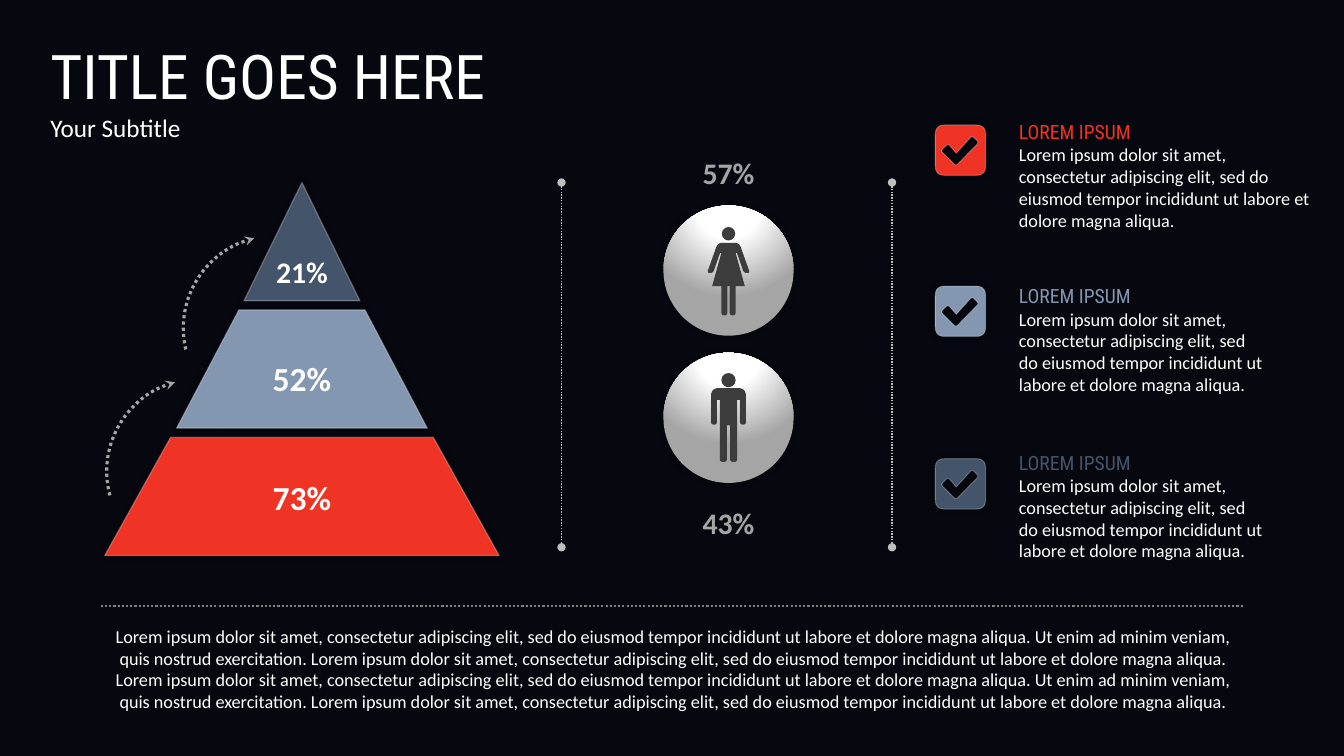
from pptx import Presentation
from pptx.dml.color import RGBColor
from pptx.enum.dml import MSO_LINE
from pptx.enum.shapes import MSO_CONNECTOR, MSO_SHAPE
from pptx.enum.text import MSO_ANCHOR, MSO_AUTO_SIZE, PP_ALIGN
from pptx.oxml import parse_xml
from pptx.oxml.ns import nsdecls, qn
from pptx.util import Cm, Pt

DOTTED = MSO_LINE.ROUND_DOT
CENTER, LEFT = PP_ALIGN.CENTER, PP_ALIGN.LEFT
TOP, BOTTOM = MSO_ANCHOR.TOP, MSO_ANCHOR.BOTTOM
GROW = MSO_AUTO_SIZE.SHAPE_TO_FIT_TEXT
OVAL, ARC, STRAIGHT = MSO_SHAPE.OVAL, MSO_SHAPE.ARC, MSO_CONNECTOR.STRAIGHT

COLORS = {
    "night": "07080F", "white": "FFFFFF", "slate": "44546B", "steel": "8397B1",
    "red": "EF3425", "silver": "A5A5A5", "arrow": "A6A6A6", "divider": "BFBFBF",
    "rule": "808080", "figure": "3C3C3C", "black": "000000",
}
HEADING_FONT, BODY_FONT = "Roboto Condensed", "Calibri"

LOREM = ("Lorem ipsum dolor sit amet, consectetur adipiscing elit, sed do eiusmod "
         "tempor incididunt ut labore et dolore magna aliqua.")
VENIAM = "Ut enim ad minim veniam, quis nostrud exercitation."
FOOTER = " ".join([LOREM, VENIAM, LOREM] * 2)
TITLE = [("TITLE GOES HERE", 44, HEADING_FONT, "white"),
         ("Your Subtitle", 18, BODY_FONT, "white")]

TIERS = [
    ("21%", 21.3, "slate", 0, 1.46, 6.4),
    ("52%", 24, "steel", 1.59, 3.16, 9.02),
    ("73%", 24, "red", 3.31, 4.97, 12.01),
]
ARROWS = [(2.69, 9.55, 254.9), (4.62, 5.94, 256.6)]
DIVIDERS = [14.15, 22.48]
FEATURES = [
    ("LOREM IPSUM", "red", 2.9, 3.15, 7.95, 3.07),
    ("LOREM IPSUM", "steel", 7.04, 7.21, 6.76, 3.63),
    ("LOREM IPSUM", "slate", 11.23, 11.56, 6.76, 3.63),
]
WOMAN = [(.27, 0, .12), (.54, .76, .07), (.39, .76, .07), (.21, .25, 0), (.18, .25, 0),
         (.41, 1.09, 0), (.18, 1.09, 0), (.18, 1.83, .08), (.03, 1.83, .08), (.03, 1.09, 0)]
MAN = [(.44, 0, .2), (.44, .92, .07), (.29, .92, .07), (.29, .3, 0), (.22, .3, 0),
       (.22, 1.86, .08), (.04, 1.86, .08), (.04, .94, 0)]
PEOPLE = [
    ("57%", 3.91, 5.18, 5.72, .34, 6.12, WOMAN),
    ("43%", 12.73, 8.89, 9.4, .36, 9.78, MAN),
]
BADGE_SIDE = 1.27
BADGE = [(0, 0, .24), (BADGE_SIDE, 0, .24), (BADGE_SIDE, BADGE_SIDE, .24), (0, BADGE_SIDE, .24)]
CHECK = [(1.1, .44, .07), (.93, .27, .07), (.53, .71, 0), (.32, .47, .07), (.14, .65, .07),
         (.52, 1.03, .07)]

PYRAMID_X, PYRAMID_TOP, TIER_HEIGHT, TIER_PITCH = 7.61, 4.6, 2.98, 3.21
PEOPLE_X, DISC_SIDE, ARROW_SIDE = 18.36, 3.28, 4.65
BADGE_X, FEATURE_X = 23.57, 25.43

prs = Presentation()
prs.slide_width, prs.slide_height = Cm(33.87), Cm(19.05)
slide = prs.slides.add_slide(prs.slide_layouts[6])
shapes = slide.shapes


def rgb(color):
    return RGBColor.from_string(COLORS[color])


def apply(target, values):
    for name, value in values.items():
        setattr(target, name, value)


def add_xml(parent, tag, inner="", attrs=""):
    parent.append(parse_xml(f"<a:{tag} {nsdecls('a')} {attrs}>{inner}</a:{tag}>"))


def add_text(box, paragraphs, align=LEFT, bold=False, inset=None, anchor=TOP, wrap=True):
    frame = shapes.add_textbox(*map(Cm, box)).text_frame
    apply(frame, {"word_wrap": wrap, "auto_size": GROW, "vertical_anchor": anchor})
    if inset is not None:
        apply(frame, {f"margin_{side}": Cm(inset) for side in ("left", "top", "right", "bottom")})
    for index, (text, size, font, color) in enumerate(paragraphs):
        paragraph = frame.add_paragraph() if index else frame.paragraphs[0]
        paragraph.alignment = align
        run = paragraph.add_run()
        run.text = text
        apply(run.font, {"size": Pt(size), "name": font, "bold": bold})
        run.font.color.rgb = rgb(color)


def style_line(line, color, width, dash=None, **ends):
    line.color.rgb = rgb(color)
    apply(line, {"width": Pt(width), "dash_style": dash})
    for tag, kind in ends.items():
        add_xml(line._get_or_add_ln(), tag, attrs=f'type="{kind}"')


def add_glow(shape):
    shape.shadow.inherit = False
    effects = shape._element.spPr.find(qn("a:effectLst"))
    shade = f'<a:srgbClr val="{COLORS["black"]}"><a:alpha val="40000"/></a:srgbClr>'
    add_xml(effects, "outerShdw", shade, 'blurRad="63500" dist="0" algn="ctr" rotWithShape="0"')


def add_outline(contours, color, edge=None):
    contours = [[(Cm(x), Cm(y)) for x, y in contour] for contour in contours]
    builder = shapes.build_freeform(*contours[0][0], scale=1.0)
    for index, contour in enumerate(contours):
        if index:
            builder.move_to(*contour[0])
        builder.add_line_segments(contour[1:], close=True)
    shape = builder.convert_to_shape()
    shape.fill.solid()
    shape.fill.fore_color.rgb = rgb(color)
    if edge:
        style_line(shape.line, "white", edge)
        add_xml(shape._element.spPr.find(".//" + qn("a:ln") + "//" + qn("a:srgbClr")),
                "alpha", attrs='val="25000"')
        add_glow(shape)
    else:
        shape.line.fill.background()
        shape.shadow.inherit = False


def add_disc(x, y, side, color):
    disc = shapes.add_shape(OVAL, Cm(x), Cm(y), Cm(side), Cm(side))
    disc.fill.solid()
    disc.fill.fore_color.rgb = rgb(color)
    disc.line.fill.background()
    disc.shadow.inherit = False
    return disc


def add_connector(start, end, color, width, **ends):
    connector = shapes.add_connector(STRAIGHT, *map(Cm, start + end))
    style_line(connector.line, color, width, DOTTED, **ends)
    add_xml(connector._element.spPr, "effectLst")


def rounded(corners, left, top, steps=6):
    points = []
    for index, (x, y, radius) in enumerate(corners):
        if not radius:
            points.append((left + x, top + y))
            continue
        tangents = []
        for near_x, near_y, _ in (corners[index - 1], corners[(index + 1) % len(corners)]):
            share = radius / ((near_x - x) ** 2 + (near_y - y) ** 2) ** .5
            tangents.append((x + share * (near_x - x), y + share * (near_y - y)))
        (ax, ay), (bx, by) = tangents
        for step in range(steps + 1):
            t = step / steps
            a, c, b = (1 - t) ** 2, 2 * t * (1 - t), t * t
            points.append((left + a * ax + c * x + b * bx, top + a * ay + c * y + b * by))
    return points


slide.background.fill.solid()
slide.background.fill.fore_color.rgb = rgb("night")

for row, (share, size, color, upper, lower, label_top) in enumerate(TIERS):
    top = PYRAMID_TOP + row * TIER_PITCH
    base = top + TIER_HEIGHT
    add_outline([[(PYRAMID_X - lower, base), (PYRAMID_X - upper, top),
                  (PYRAMID_X + upper, top), (PYRAMID_X + lower, base)]], color, 1)
    add_text((PYRAMID_X - .75, label_top, 1.5, size * .0425), [(share, size, BODY_FONT, "white")],
             CENTER, True, 0, BOTTOM, False)

for x, y, angle in ARROWS:
    arrow = shapes.add_shape(ARC, Cm(x), Cm(y), Cm(ARROW_SIDE), Cm(ARROW_SIDE))
    arrow.rotation = angle
    arrow.fill.background()
    style_line(arrow.line, "arrow", 2.25, DOTTED, tailEnd="stealth")
    arrow.shadow.inherit = False

for x in DIVIDERS:
    add_connector((x, 4.6), (x, 13.79), "divider", 1, headEnd="oval", tailEnd="oval")
add_connector((2.54, 15.27), (31.32, 15.27), "rule", 1.5)

for heading, color, text_top, badge_top, width, height in FEATURES:
    add_text((FEATURE_X, text_top, width, height),
             [(heading, 14, HEADING_FONT, color), (LOREM, 13, BODY_FONT, "white")])
    add_outline([rounded(BADGE, BADGE_X, badge_top),
                 rounded(CHECK, BADGE_X, badge_top)], color, .75)

stops = "".join(f'<a:gs pos="{pos}"><a:srgbClr val="{COLORS[color]}"/></a:gs>'
                for pos, color in ((0, "white"), (35000, "white"), (100000, "silver")))
sphere = (f'<a:gradFill {nsdecls("a")}><a:gsLst>{stops}</a:gsLst><a:path path="circle">'
          '<a:fillToRect l="50000" t="-80000" r="50000" b="180000"/></a:path></a:gradFill>')
for share, label_top, disc_top, head_top, head_side, body_top, half in PEOPLE:
    disc = add_disc(PEOPLE_X - DISC_SIDE / 2, disc_top, DISC_SIDE, "silver")
    properties = disc._element.spPr
    properties.replace(properties.find(qn("a:solidFill")), parse_xml(sphere))
    add_glow(disc)
    add_disc(PEOPLE_X - head_side / 2, head_top, head_side, "figure")
    body = half + [(-x, y, radius) for x, y, radius in reversed(half)]
    add_outline([rounded(body, PEOPLE_X, body_top)], "figure")
    add_text((PEOPLE_X - .79, label_top, 1.58, .91), [(share, 21.3, BODY_FONT, "silver")],
             CENTER, True, 0)

add_text((2.57, 15.75, 28.75, 2.77), [(FOOTER, 13, BODY_FONT, "white")], CENTER, inset=0)
add_text((1.02, .84, 16.51, 2.9), TITLE)

prs.save("out.pptx")
